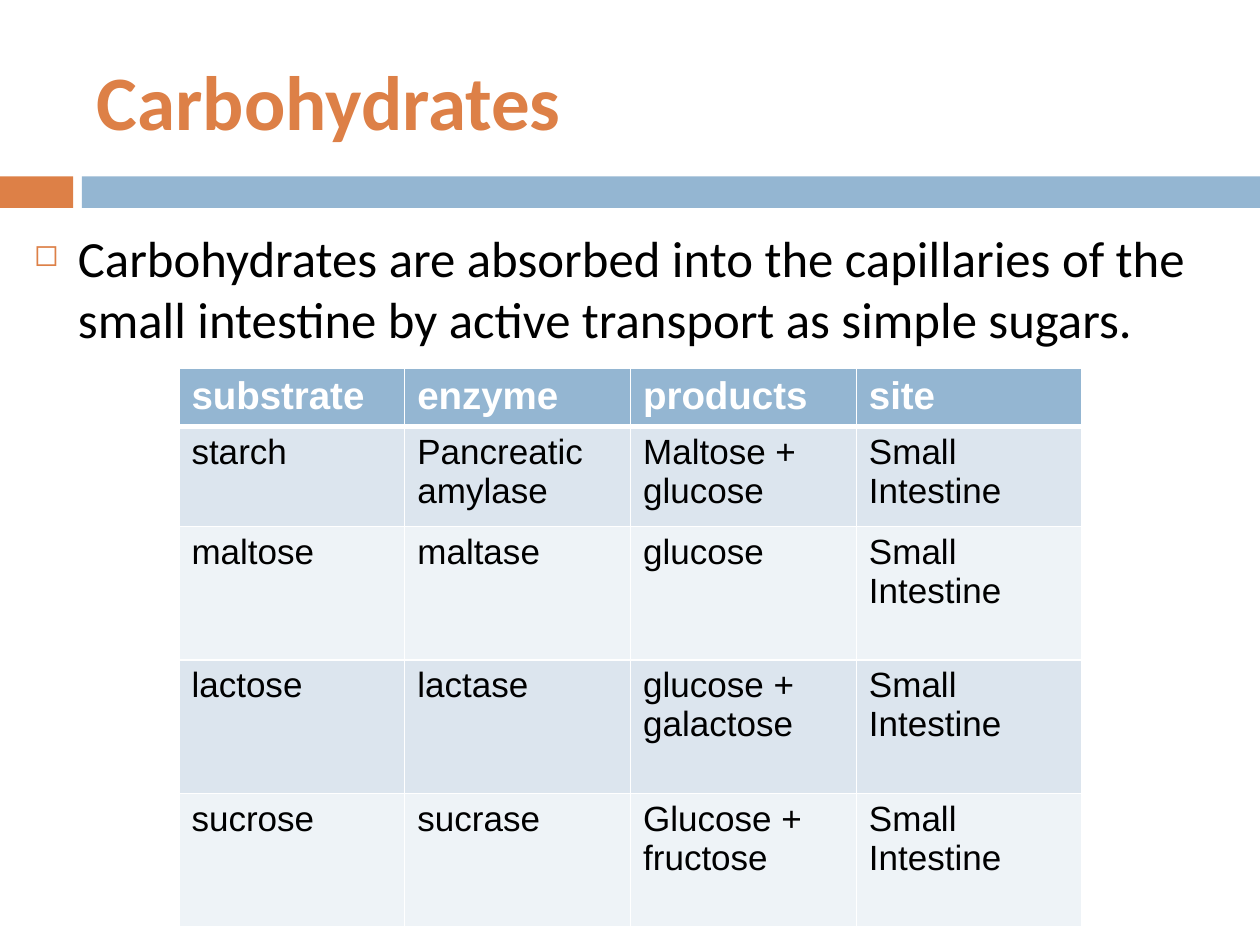
from lxml import etree
from pptx import Presentation, util as u
from pptx.dml.color import RGBColor
from pptx.enum import shapes, text
from pptx.oxml import ns


def paint(fill, color):
    fill.solid()
    fill.fore_color.rgb = RGBColor.from_string(color)


def write(paragraph, words, size, color, font="Calibri", bold=False):
    paragraph.text = words
    paragraph.font.size = u.Pt(size)
    paragraph.font.name = font
    paragraph.font.bold = bold
    paint(paragraph.font.fill, color)


ORANGE, BLUE, WHITE, BLACK = "DD8047", "94B6D2", "FFFFFF", "000000"
BANDS = ["DCE5EE", "EEF3F7"]

deck = Presentation()
deck.slide_width, deck.slide_height = u.Inches(10), u.Inches(7.5)
slide = deck.slides.add_slide(deck.slide_layouts[6])

for left, width, color in [(0, 0.58, ORANGE), (0.65, 9.35, BLUE)]:
    stripe = slide.shapes.add_shape(
        shapes.MSO_SHAPE.RECTANGLE,
        u.Inches(left), u.Inches(1.4), u.Inches(width), u.Inches(0.25))
    stripe.shadow.inherit = False
    paint(stripe.fill, color)
    stripe.line.fill.background()

heading = slide.shapes.add_textbox(
    u.Inches(0.67), u.Inches(0.25), u.Inches(8.92), u.Inches(1.08)).text_frame
heading.word_wrap = True
heading.vertical_anchor = text.MSO_ANCHOR.MIDDLE
write(heading.paragraphs[0], "Carbohydrates", 44, ORANGE, bold=True)

statement = slide.shapes.add_textbox(
    u.Inches(0.17), u.Inches(1.75), u.Inches(9.42), u.Inches(4.92)).text_frame
statement.word_wrap = True
absorption = statement.paragraphs[0]
write(absorption, "Carbohydrates are absorbed into the capillaries of the small "
      "intestine by active transport as simple sugars.", 29, BLACK)
absorption.space_before = u.Pt(7)
indent = absorption._p.get_or_add_pPr()
indent.set("marL", str(u.Inches(0.35)))
indent.set("indent", str(-u.Inches(0.35)))
bullet = etree.fromstring(
    f'<b {ns.nsdecls("a")}><a:buClr><a:srgbClr val="{ORANGE}"/></a:buClr>'
    '<a:buSzPct val="60000"/><a:buChar char="◻"/></b>')
defaults = indent.find(ns.qn("a:defRPr"))
for part in list(bullet):
    defaults.addprevious(part)

digestion = [
    ["substrate", "enzyme", "products", "site"],
    ["starch", "Pancreatic amylase", "Maltose + glucose", "Small Intestine"],
    ["maltose", "maltase", "glucose", "Small Intestine"],
    ["lactose", "lactase", "glucose + galactose", "Small Intestine"],
    ["sucrose", "sucrase", "Glucose + fructose", "Small Intestine"],
]
row_heights = [0.46, 0.79] + [1.06] * 3
enzymes = slide.shapes.add_table(
    len(digestion), len(digestion[0]), u.Inches(1.42), u.Inches(2.92),
    u.Inches(7.17), u.Inches(sum(row_heights))).table

for r, (height, entries) in enumerate(zip(row_heights, digestion)):
    enzymes.rows[r].height = u.Inches(height)
    for c, entry in enumerate(entries):
        cell = enzymes.cell(r, c)
        edges = {"lnL": 1, "lnR": 1, "lnT": 3 if r == 1 else 1, "lnB": 3 if r == 0 else 1}
        for edge, weight in edges.items():
            border = etree.SubElement(
                cell._tc.get_or_add_tcPr(), ns.qn(f"a:{edge}"), w=str(u.Pt(weight)))
            ink = etree.SubElement(border, ns.qn("a:solidFill"))
            etree.SubElement(ink, ns.qn("a:srgbClr"), val=WHITE)
        paint(cell.fill, BANDS[(r - 1) % 2] if r else BLUE)
        write(cell.text_frame.paragraphs[0], entry, 20 if r else 22,
              BLACK if r else WHITE, "Arial", bold=r == 0)

deck.save("out.pptx")
